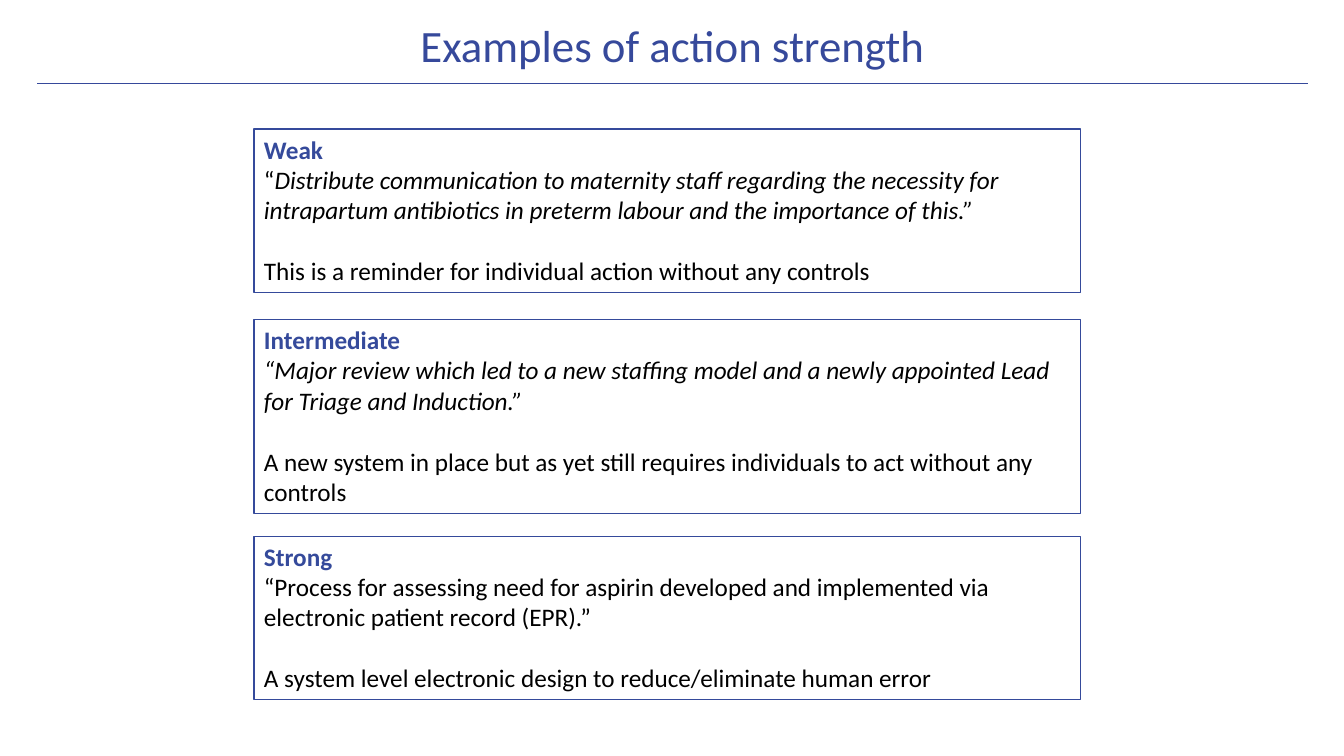
from lxml import etree
from pptx import Presentation
from pptx.dml.color import RGBColor
from pptx.enum.shapes import MSO_CONNECTOR, MSO_SHAPE
from pptx.enum.text import MSO_ANCHOR, PP_ALIGN
from pptx.oxml.ns import qn
from pptx.util import Inches, Pt

RECTANGLE = MSO_SHAPE.RECTANGLE
STRAIGHT = MSO_CONNECTOR.STRAIGHT
TOP, MIDDLE = MSO_ANCHOR.TOP, MSO_ANCHOR.MIDDLE
LEFT, CENTER = PP_ALIGN.LEFT, PP_ALIGN.CENTER

SLIDE_WIDTH, SLIDE_HEIGHT = 13.33, 7.5
FONT = "Calibri"
HEADING_BLUE, BOX_BLUE, BLACK = "36499B", "354A9B", "000000"
BOX_LEFT, BOX_WIDTH = 2.52, 8.2
BOX_PADDING, LINE_HEIGHT = 0.1, 0.304
BLANK_LINE = 22  # points between a quote and its comment

# Top, number of text lines, strength, quote as (text, italic) runs, comment
EXAMPLES = [
    (1.28, 5, "Weak",
     [("“", False),
      ("Distribute communication to maternity staff regarding the necessity for "
       "intrapartum antibiotics in preterm labour and the importance of this.”", True)],
     "This is a reminder for individual action without any controls"),
    (3.17, 6, "Intermediate",
     [("“Major review which led to a new staffing model and a newly appointed Lead "
       "for Triage and Induction.”", True)],
     "A new system in place but as yet still requires individuals to act without any controls"),
    (5.32, 5, "Strong",
     [("“Process for assessing need for aspirin developed and implemented via "
       "electronic patient record (EPR).”", False)],
     "A system level electronic design to reduce/eliminate human error"),
]


def rgb(color):
    return RGBColor.from_string(color)


def write(paragraph, text, size=18, color=BLACK, bold=False, italic=False, align=LEFT):
    """Append one formatted run to the paragraph."""
    paragraph.alignment = align
    run = paragraph.add_run()
    run.text = text
    run.font.name = FONT
    run.font.size = Pt(size)
    run.font.bold = bold
    run.font.italic = italic
    run.font.color.rgb = rgb(color)


def add_title(slide, text):
    title = slide.shapes.add_textbox(Inches(1.42), Inches(0.16), Inches(10.5), Inches(0.63))
    frame = title.text_frame
    frame.word_wrap = True
    frame.vertical_anchor = MIDDLE
    paragraph = frame.paragraphs[0]
    paragraph.line_spacing = 0.9
    write(paragraph, text, size=32, color=HEADING_BLUE, align=CENTER)


def add_rule(slide, left, right, top):
    rule = slide.shapes.add_connector(
        STRAIGHT, Inches(left), Inches(top), Inches(right), Inches(top))
    rule.line.color.rgb = rgb(HEADING_BLUE)
    rule.line.width = Pt(0.5)
    etree.SubElement(rule._element.spPr, qn("a:effectLst"))


def add_example(slide, top, line_count, strength, quote, comment):
    height = BOX_PADDING + line_count * LINE_HEIGHT
    box = slide.shapes.add_shape(
        RECTANGLE, Inches(BOX_LEFT), Inches(top), Inches(BOX_WIDTH), Inches(height))
    box.shadow.inherit = False
    box.fill.background()
    box.line.color.rgb = rgb(BOX_BLUE)
    box.line.width = Pt(1)
    frame = box.text_frame
    frame.word_wrap = True
    frame.vertical_anchor = TOP
    write(frame.paragraphs[0], strength, color=BOX_BLUE, bold=True)
    quote_paragraph = frame.add_paragraph()
    for text, italic in quote:
        write(quote_paragraph, text, italic=italic)
    comment_paragraph = frame.add_paragraph()
    comment_paragraph.space_before = Pt(BLANK_LINE)
    write(comment_paragraph, comment)


def main():
    presentation = Presentation()
    presentation.slide_width = Inches(SLIDE_WIDTH)
    presentation.slide_height = Inches(SLIDE_HEIGHT)
    slide = presentation.slides.add_slide(presentation.slide_layouts[6])
    add_rule(slide, left=0.37, right=12.97, top=0.83)
    add_title(slide, "Examples of action strength")
    for example in EXAMPLES:
        add_example(slide, *example)
    presentation.save("out.pptx")


if __name__ == "__main__":
    main()
